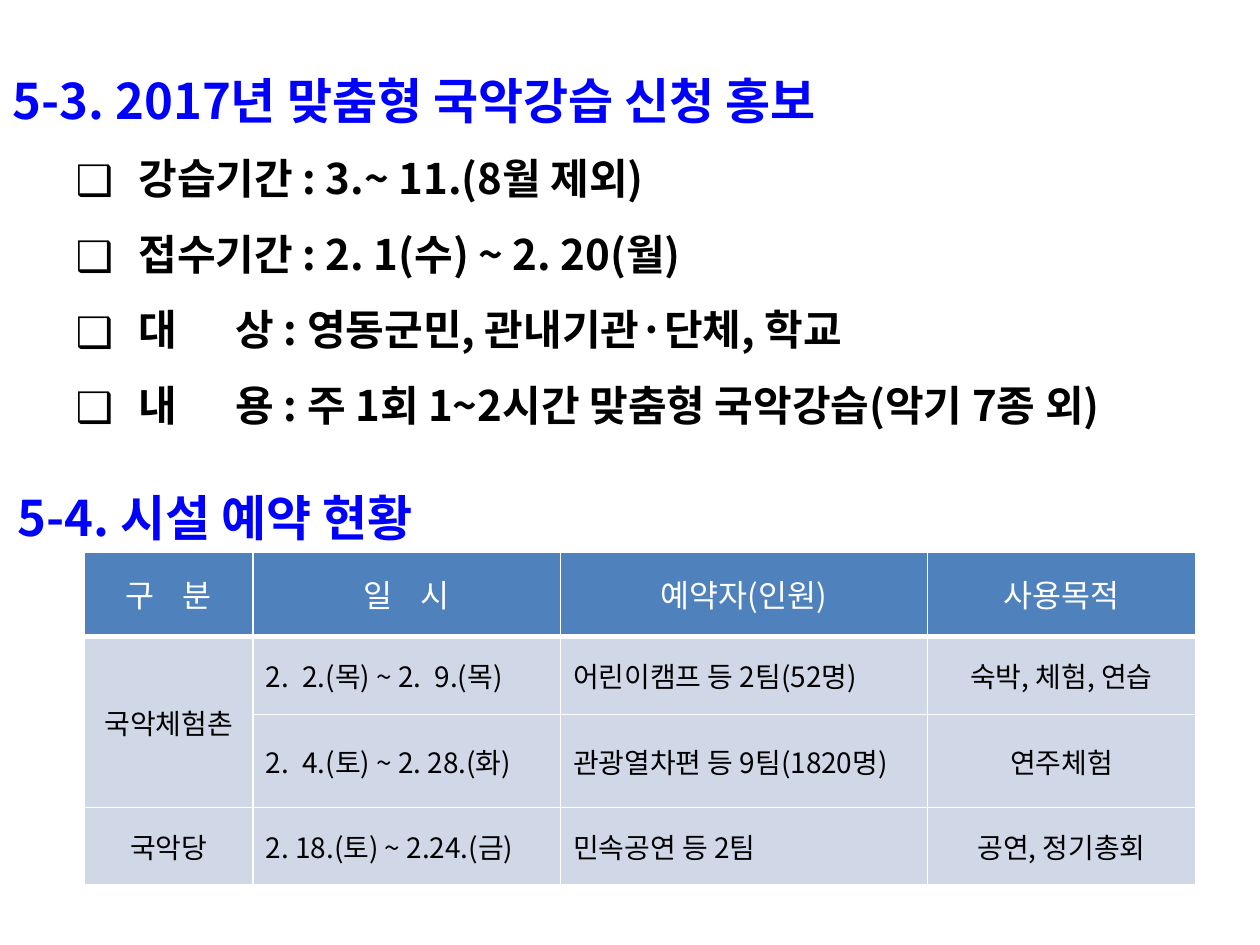
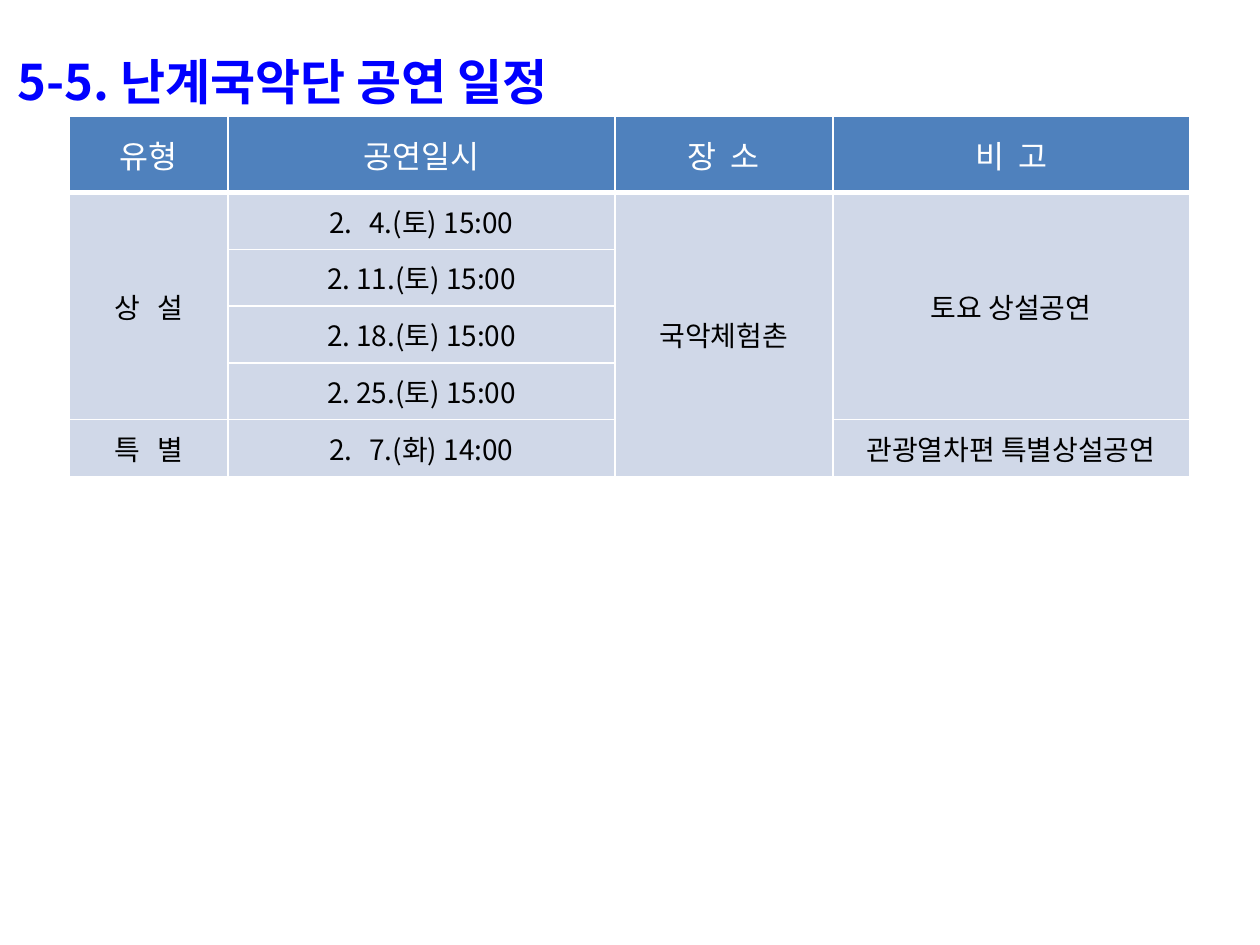
import pptx
import pptx.util
import pptx.dml.color
import pptx.enum.text
import pptx.oxml
import pptx.oxml.ns

Inches, Pt = pptx.util.Inches, pptx.util.Pt
RGB = pptx.dml.color.RGBColor
ALIGN = pptx.enum.text.PP_ALIGN
ANCHOR = pptx.enum.text.MSO_ANCHOR

BLUE = RGB(0x00, 0x00, 0xFF)
BLACK = RGB(0x00, 0x00, 0x00)
WHITE = RGB(0xFF, 0xFF, 0xFF)
HEAD_FILL = RGB(0x4F, 0x81, 0xBD)
CELL_FILL = RGB(0xD0, 0xD8, 0xE8)
FONT = "Noto Sans CJK KR"

LESSON_TITLE = "5-3. 2017년 맞춤형 국악강습 신청 홍보"
LESSONS = [
    "강습기간 : 3.~ 11.(8월 제외)",
    "접수기간 : 2. 1(수) ~ 2. 20(월)",
    "대|상 : 영동군민, 관내기관·단체, 학교",
    "내|용 : 주 1회 1~2시간 맞춤형 국악강습(악기 7종 외)",
]

BOOKING_TITLE = "5-4. 시설 예약 현황"
BOOKINGS = {
    "at": (0.67, 4.38),
    "cols": [1.34, 2.44, 2.91, 2.13],
    "rows": [0.67, 0.62, 0.62, 0.61],
    "cells": [
        ["구|분", "일|시", "예약자(인원)", "사용목적"],
        ["국악체험촌", "2.|2.(목) ~ 2.|9.(목)", "어린이캠프 등 2팀(52명)", "숙박, 체험, 연습"],
        [None, "2.|4.(토) ~ 2. 28.(화)", "관광열차편 등 9팀(1820명)", "연주체험"],
        ["국악당", "2. 18.(토) ~ 2.24.(금)", "민속공연 등 2팀", "공연, 정기총회"],
    ],
    "merges": [((1, 0), (2, 0))],
    "left_cols": (1, 2),
    "head_gap": 12,
    "body_gap": 4,
}

CONCERT_TITLE = "5-5. 난계국악단 공연 일정"
CONCERTS = {
    "at": (0.55, 0.92),
    "cols": [1.26, 3.07, 1.73, 2.83],
    "rows": [0.61] + [0.45] * 5,
    "cells": [
        ["유형", "공연일시", "장|소", "비|고"],
        ["상|설", "2.|4.(토) 15:00", "국악체험촌", "토요 상설공연"],
        [None, "2. 11.(토) 15:00", None, None],
        [None, "2. 18.(토) 15:00", None, None],
        [None, "2. 25.(토) 15:00", None, None],
        ["특|별", "2.|7.(화) 14:00", None, "관광열차편 특별상설공연"],
    ],
    "merges": [((1, 0), (4, 0)), ((1, 2), (5, 2)), ((1, 3), (4, 3))],
    "left_cols": (),
    "head_gap": 4,
    "body_gap": 6,
}


def add_xml(parent, xml):
    ns = pptx.oxml.ns.nsdecls("a")
    parent.append(pptx.oxml.parse_xml(xml.replace("/>", f" {ns}/>", 1)
                                      if xml.endswith("/>") and xml.count("<") == 1
                                      else xml.replace(">", f" {ns}>", 1)))


def add_run(p, text, size, color, bold, spacing=None):
    r = p.add_run()
    r.text = text
    r.font.size, r.font.bold, r.font.name = Pt(size), bold, FONT
    r.font.color.rgb = color
    rPr = r.font._element
    add_xml(rPr, f'<a:ea typeface="{FONT}"/>')
    if spacing:
        rPr.set("spc", str(spacing * 100))


def add_text(p, text, size, color, bold=False, gap=0):
    for i, part in enumerate(text.split("|")):
        if i:
            add_run(p, " ", size, color, bold, gap)
        add_run(p, part, size, color, bold)


def place(sp, left, top, width, height):
    sp.left, sp.top, sp.width, sp.height = map(Inches, (left, top, width, height))
    tf = sp.text_frame
    tf.word_wrap = True
    tf.auto_size = pptx.enum.text.MSO_AUTO_SIZE.NONE
    tf.vertical_anchor = ANCHOR.TOP
    return tf


def set_heading(sp, text, left, top):
    p = place(sp, left, top, 8.5, 0.81).paragraphs[0]
    p.alignment = ALIGN.LEFT
    p.line_spacing = Pt(50)
    add_text(p, text, 28, BLUE, True)


def set_list(sp, items):
    tf = place(sp, 0, 0.96, 10, 2.5)
    tf.margin_right = 0
    for i, item in enumerate(items):
        p = tf.add_paragraph() if i else tf.paragraphs[0]
        p.line_spacing, p.space_before = Pt(43.2), Pt(0)
        pPr = p._p.get_or_add_pPr()
        pPr.set("marL", str(Inches(1)))
        pPr.set("indent", str(-Inches(0.5)))
        add_xml(pPr, '<a:buClr><a:srgbClr val="000000"/></a:buClr>')
        add_xml(pPr, f'<a:buFont typeface="{FONT}"/>')
        add_xml(pPr, '<a:buChar char="❑"/>')
        add_text(p, item, 24, BLACK, True, 28)


def set_borders(cell, row):
    tcPr = cell._tc.get_or_add_tcPr()
    widths = {"L": 1, "R": 1, "T": 3 if row == 1 else 1, "B": 3 if row == 0 else 1}
    for side, width in widths.items():
        add_xml(tcPr, f'<a:ln{side} w="{Pt(width)}"><a:solidFill>'
                      f'<a:srgbClr val="{WHITE}"/></a:solidFill></a:ln{side}>')


def add_table(s, spec):
    cols, rows = spec["cols"], spec["rows"]
    box = map(Inches, (*spec["at"], sum(cols), sum(rows)))
    table = s.shapes.add_table(len(rows), len(cols), *box).table
    for col, width in zip(table.columns, cols):
        col.width = Inches(width)
    for row, height in zip(table.rows, rows):
        row.height = Inches(height)
    for i, texts in enumerate(spec["cells"]):
        head = i == 0
        for j, text in enumerate(texts):
            cell = table.cell(i, j)
            set_borders(cell, i)
            cell.fill.solid()
            cell.fill.fore_color.rgb = HEAD_FILL if head else CELL_FILL
            cell.vertical_anchor = ANCHOR.MIDDLE
            if text is None:
                continue
            p = cell.text_frame.paragraphs[0]
            left = not head and j in spec["left_cols"]
            p.alignment = ALIGN.LEFT if left else ALIGN.CENTER
            add_text(p, text, 18 if head else 16, WHITE if head else BLACK,
                     gap=spec["head_gap" if head else "body_gap"])
    for first, last in spec["merges"]:
        table.cell(*first).merge(table.cell(*last))


def main():
    prs = pptx.Presentation()
    prs.slide_width, prs.slide_height = Inches(10), Inches(7.5)

    s = prs.slides.add_slide(prs.slide_layouts[1])
    set_heading(s.shapes.title, LESSON_TITLE, 0, 0.28)
    set_list(s.placeholders[1], LESSONS)
    set_heading(s.shapes.add_textbox(0, 0, 0, 0), BOOKING_TITLE, 0.04, 3.59)
    add_table(s, BOOKINGS)

    s = prs.slides.add_slide(prs.slide_layouts[5])
    set_heading(s.shapes.title, CONCERT_TITLE, 0.04, 0.13)
    add_table(s, CONCERTS)

    prs.save("out.pptx")


if __name__ == "__main__":
    main()
